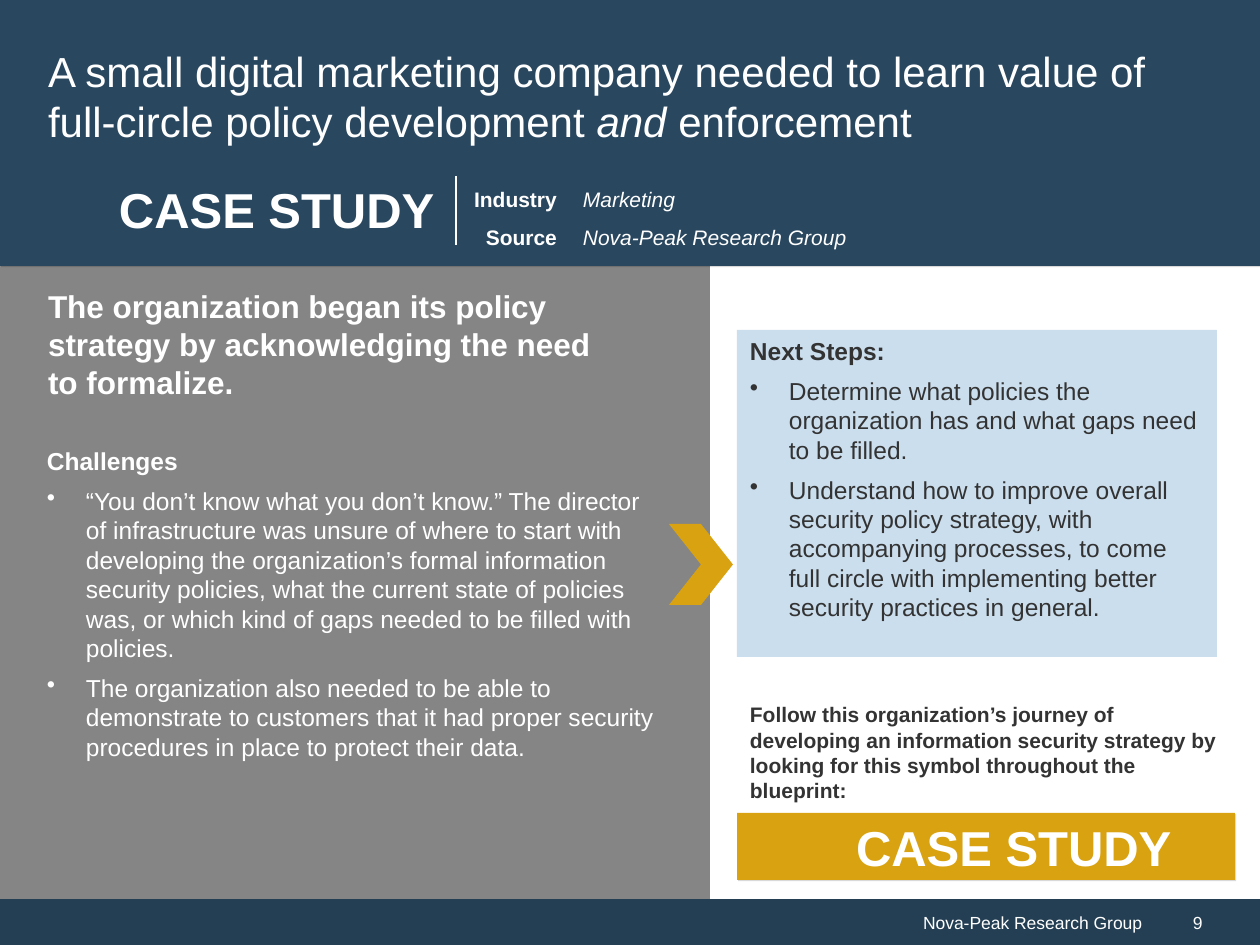
from dataclasses import dataclass

from lxml import etree
from pptx import Presentation
from pptx.dml.color import RGBColor
from pptx.enum.shapes import MSO_CONNECTOR, MSO_SHAPE
from pptx.enum.text import MSO_ANCHOR, PP_ALIGN
from pptx.oxml.ns import qn
from pptx.util import Emu, Pt

RECT, CHEVRON = MSO_SHAPE.RECTANGLE, MSO_SHAPE.CHEVRON
STRAIGHT = MSO_CONNECTOR.STRAIGHT
TOP, MIDDLE = MSO_ANCHOR.TOP, MSO_ANCHOR.MIDDLE
LEFT, RIGHT = PP_ALIGN.LEFT, PP_ALIGN.RIGHT

EMU_PER_PX = 914400 / 126
PAGE_WIDTH, PAGE_HEIGHT = 1260, 945
HANGING = 39
INSETS = (13, 6, 13, 6)
ORGANIZATION = "Nova-Peak Research Group"


@dataclass(frozen=True)
class Theme:
    font: str = "Arial"
    navy: str = "29475F"
    footer: str = "243F54"
    gray: str = "858585"
    pale: str = "CBDEEE"
    gold: str = "D9A210"
    white: str = "FFFFFF"
    ink: str = "333333"
    small: int = 10
    label: int = 12
    body: int = 14
    lead: int = 18
    title: int = 24
    banner: int = 28


THEME = Theme()


def px(length):
    return Emu(round(length * EMU_PER_PX))


def add_panel(page, box, color, kind=RECT):
    panel = page.shapes.add_shape(kind, *map(px, box))
    panel.shadow.inherit = False
    panel.fill.solid()
    panel.fill.fore_color.rgb = RGBColor.from_string(color)
    panel.line.fill.background()
    return panel


def add_text_box(page, box):
    return page.shapes.add_textbox(*map(px, box))


def add_shadow(panel):
    effects = panel._element.spPr.find(qn("a:effectLst"))
    shadow = etree.SubElement(effects, qn("a:outerShdw"), blurRad="0",
                              dist=str(Pt(1)), dir=str(45 * 60000))
    color = etree.SubElement(shadow, qn("a:srgbClr"), val="000000")
    etree.SubElement(color, qn("a:alpha"), val="14000")


def prepare_frame(shape, anchor=TOP, insets=INSETS):
    frame = shape.text_frame
    sides = ("margin_left", "margin_top", "margin_right", "margin_bottom")
    settings = dict(zip(sides, map(px, insets)),
                    word_wrap=True, vertical_anchor=anchor)
    for name, value in settings.items():
        setattr(frame, name, value)
    return frame


def add_span(para, text, size, color, **style):
    span = para.add_run()
    span.text = text
    settings = {"name": THEME.font, "size": Pt(size), **style}
    for name, value in settings.items():
        setattr(span.font, name, value)
    span.font.color.rgb = RGBColor.from_string(color)


def format_para(para, indent=0, hanging=0, **settings):
    for name, value in {"alignment": LEFT, **settings}.items():
        setattr(para, name, value)
    properties = para._p.get_or_add_pPr()
    properties.set("marL", str(px(indent)))
    properties.set("indent", str(px(-hanging)))


def write_line(shape, text, size, color, anchor=TOP, insets=INSETS,
               indent=0, alignment=LEFT, **style):
    para = prepare_frame(shape, anchor, insets).paragraphs[0]
    format_para(para, indent, alignment=alignment)
    add_span(para, text, size, color, **style)


def write_list(shape, heading, points, color):
    """Write a bold heading followed by bulleted points."""
    frame = prepare_frame(shape)
    para = frame.paragraphs[0]
    format_para(para, space_after=Pt(6))
    add_span(para, heading, THEME.body, color, bold=True)
    for point in points:
        para = frame.add_paragraph()
        format_para(para, HANGING, HANGING, space_after=Pt(6))
        etree.SubElement(para._p.get_or_add_pPr(), qn("a:buChar"), char="•")
        add_span(para, point, THEME.body, color)


def write_column(shape, lines, alignment, **style):
    frame = prepare_frame(shape)
    for index, line in enumerate(lines):
        para = frame.add_paragraph() if index else frame.paragraphs[0]
        format_para(para, alignment=alignment, line_spacing=1.5)
        add_span(para, line, THEME.label, THEME.white, **style)


def add_footer(page, box):
    left, top, width, height = box
    number_width = 105
    split = width - number_width
    organization = add_panel(page, (left, top, split, height), THEME.footer)
    write_line(organization, ORGANIZATION, THEME.small, THEME.white, MIDDLE,
               indent=37, alignment=RIGHT)
    number = add_panel(page, (left + split, top, number_width, height), THEME.footer)
    write_line(number, "9", THEME.small, THEME.white, MIDDLE, indent=25)


def add_challenges(page, box):
    left, top, width, height = box
    add_panel(page, box, THEME.gray)
    lead = add_text_box(page, (left + 35, top + 21, 583, 127))
    write_line(lead, "The organization began its policy strategy by acknowledging "
               "the need to formalize.", THEME.lead, THEME.white, bold=True)
    challenges = add_text_box(page, (left + 34, top + 180, 641, 331))
    write_list(challenges, "Challenges", [
        "“You don’t know what you don’t know.” The director of infrastructure "
        "was unsure of where to start with developing the organization’s formal "
        "information security policies, what the current state of policies was, "
        "or which kind of gaps needed to be filled with policies.",
        "The organization also needed to be able to demonstrate to customers that "
        "it had proper security procedures in place to protect their data.",
    ], THEME.white)


def add_banner(page, box, color):
    banner = add_panel(page, box, color)
    add_shadow(banner)
    write_line(banner, "CASE STUDY", THEME.banner, THEME.white, MIDDLE,
               insets=(95, 6, 13, 6), indent=24, bold=True)


def add_case_details(page, box):
    left, top, width, height = box
    label_width = 120
    labels = add_panel(page, (left, top, label_width, height), THEME.navy)
    write_column(labels, ["Industry", "Source"], RIGHT, bold=True)
    divider = page.shapes.add_connector(
        STRAIGHT, px(left + 6), px(top + 8), px(left + 6), px(top + 77))
    divider.line.color.rgb = RGBColor.from_string(THEME.white)
    divider.line.width = Pt(0.75)
    etree.SubElement(divider._element.spPr, qn("a:effectLst"))
    values = add_text_box(page, (left + label_width, top, width - label_width, height))
    write_column(values, ["Marketing", ORGANIZATION], LEFT, italic=True)


def add_header(page, box):
    left, top, width, height = box
    banner_top = top + 151
    add_panel(page, (left, top, width, 155), THEME.navy)
    add_banner(page, (left, banner_top, width, height - 151), THEME.navy)
    add_case_details(page, (left + 450, banner_top + 17, 635, 85))
    title = add_text_box(page, (left + 35, top + 35, 1188, 121))
    para = prepare_frame(title, MIDDLE).paragraphs[0]
    format_para(para)
    for text, italic in (
        ("A small digital marketing company needed to learn value of "
         "full-circle policy development ", False),
        ("and ", True),
        ("enforcement", False),
    ):
        add_span(para, text, THEME.title, THEME.white, italic=italic)


def add_next_steps(page, box):
    left, top, width, height = box
    steps = add_panel(page, box, THEME.pale)
    write_list(steps, "Next Steps:", [
        "Determine what policies the organization has and what gaps need to be filled.",
        "Understand how to improve overall security policy strategy, with "
        "accompanying processes, to come full circle with implementing better "
        "security practices in general.",
    ], THEME.ink)
    add_panel(page, (left - 68, top + 194, 64, 81), THEME.gold, CHEVRON)


def add_journey(page, box):
    left, top, width, height = box
    note = add_text_box(page, (left, top, width, 117))
    write_line(note, "Follow this organization’s journey of developing an information "
               "security strategy by looking for this symbol throughout the blueprint:",
               THEME.label, THEME.ink, bold=True)
    add_banner(page, (left, top + 117, 498, height - 117), THEME.gold)


def main():
    deck = Presentation()
    deck.slide_width, deck.slide_height = px(PAGE_WIDTH), px(PAGE_HEIGHT)
    page = deck.slides.add_slide(deck.slide_layouts[6])
    add_footer(page, (0, 899, PAGE_WIDTH, 46))
    add_challenges(page, (0, 260, 710, 639))
    add_header(page, (0, 0, PAGE_WIDTH, 266))
    add_next_steps(page, (737, 330, 480, 327))
    add_journey(page, (737, 696, 503, 184))
    deck.save("out.pptx")


if __name__ == "__main__":
    main()
